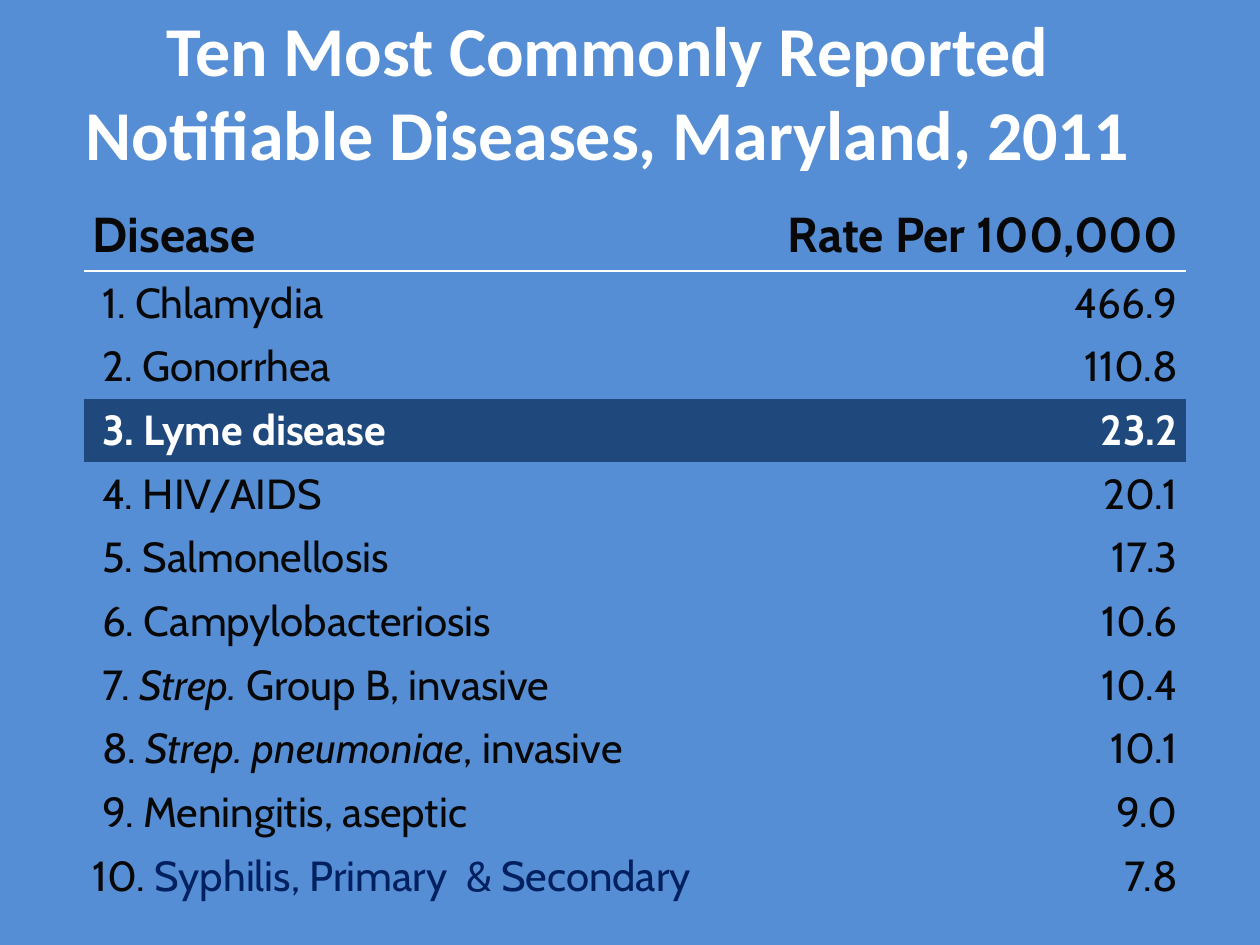
import pptx
import pptx.dml.color
import pptx.enum.text
import pptx.oxml
import pptx.oxml.ns
import pptx.util

Pt = pptx.util.Pt
RGBColor = pptx.dml.color.RGBColor
ALIGN = pptx.enum.text.PP_ALIGN

SKY = RGBColor(0x55, 0x8E, 0xD5)
NAVY = RGBColor(0x1F, 0x49, 0x7D)
INK = RGBColor(0x08, 0x08, 0x08)
MIDNIGHT = RGBColor(0x00, 0x20, 0x60)
WHITE = RGBColor(0xFF, 0xFF, 0xFF)

TITLE = "Ten Most Commonly Reported\nNotifiable Diseases, Maryland, 2011"
HEADER = (["Disease"], "Rate Per 100,000")
DISEASES = [
    ([" 1. Chlamydia"], "466.9"),
    ([" 2. Gonorrhea"], "110.8"),
    ([" 3. Lyme disease"], "23.2"),
    ([" 4. HIV/AIDS"], "20.1"),
    ([" 5. Salmonellosis"], "17.3"),
    ([" 6. Campylobacteriosis"], "10.6"),
    ([" 7. ", "Strep.", " Group B, invasive"], "10.4"),
    ([" 8. ", "Strep. pneumoniae", ", invasive"], "10.1"),
    ([" 9. Meningitis, aseptic"], "9.0"),
    (["10. ", "Syphilis, Primary  & Secondary"], "7.8"),
]
ITALIC = {"Strep.", "Strep. pneumoniae"}
TINTED = {"Syphilis, Primary  & Secondary"}
HIGHLIGHT_ROW = 3
NO_STYLE = "{2D5ABB26-0587-4C30-8999-92F81FD0307C}"


def style_span(span, face, size, color, bold):
    span.font.name = face
    span.font.size = Pt(size)
    span.font.color.rgb = color
    span.font.bold = bold


def set_borders(cell, ruled_sides):
    properties = cell._tc.get_or_add_tcPr()
    for side in "LRTB":
        if side in ruled_sides:
            paint = f'<a:solidFill><a:srgbClr val="{WHITE}"/></a:solidFill>'
        else:
            paint = "<a:noFill/>"
        properties.append(pptx.oxml.parse_xml(
            f'<a:ln{side} {pptx.oxml.ns.nsdecls("a")} w="{Pt(1)}">{paint}</a:ln{side}>'))


def fill_cell(cell, texts, row, align):
    highlighted = row == HIGHLIGHT_ROW
    set_borders(cell, {0: "B", 1: "T"}.get(row, ""))
    if highlighted:
        cell.fill.solid()
        cell.fill.fore_color.rgb = NAVY
    else:
        cell.fill.background()
    cell.margin_left = cell.margin_right = Pt(5)
    cell.margin_top = cell.margin_bottom = Pt(3.6)
    para = cell.text_frame.paragraphs[0]
    para.alignment = align
    for text in texts:
        span = para.add_run()
        span.text = text
        color = WHITE if highlighted else MIDNIGHT if text in TINTED else INK
        style_span(span, "Cabin", 28 if row == 0 else 24, color, row == 0 or highlighted)
        span.font.italic = text in ITALIC


def add_disease_table(page, left, top, width, height):
    rows = [HEADER] + DISEASES
    table = page.shapes.add_table(
        len(rows), 2, Pt(left), Pt(top), Pt(width), Pt(height)).table
    table.first_row = table.horz_banding = False
    table._tbl.tblPr.find(pptx.oxml.ns.qn("a:tableStyleId")).text = NO_STYLE
    rate_width = 240
    table.columns[0].width = Pt(width - rate_width)
    table.columns[1].width = Pt(rate_width)
    header_height = 41
    for row, (names, rate) in enumerate(rows):
        table.rows[row].height = Pt(
            header_height if row == 0 else (height - header_height) / len(DISEASES))
        fill_cell(table.cell(row, 0), names, row, ALIGN.LEFT)
        fill_cell(table.cell(row, 1), [rate], row, ALIGN.RIGHT)


def add_title(page, left, top, width, height):
    box = page.shapes.add_textbox(Pt(left), Pt(top), Pt(width), Pt(height))
    frame = box.text_frame
    frame.word_wrap = False
    frame.auto_size = pptx.enum.text.MSO_AUTO_SIZE.SHAPE_TO_FIT_TEXT
    frame.text = TITLE
    for para in frame.paragraphs:
        para.alignment = ALIGN.CENTER
        style_span(para.runs[0], "Calibri", 40, WHITE, True)


def main():
    deck = pptx.Presentation()
    deck.slide_width = Pt(720)
    deck.slide_height = Pt(540)
    page = deck.slides.add_slide(deck.slide_layouts[6])
    page.background.fill.solid()
    page.background.fill.fore_color.rgb = SKY
    add_disease_table(page, 48, 113.75, 630, 402)
    add_title(page, 38, 0, 618.5, 104.4)
    deck.save("out.pptx")


if __name__ == "__main__":
    main()
